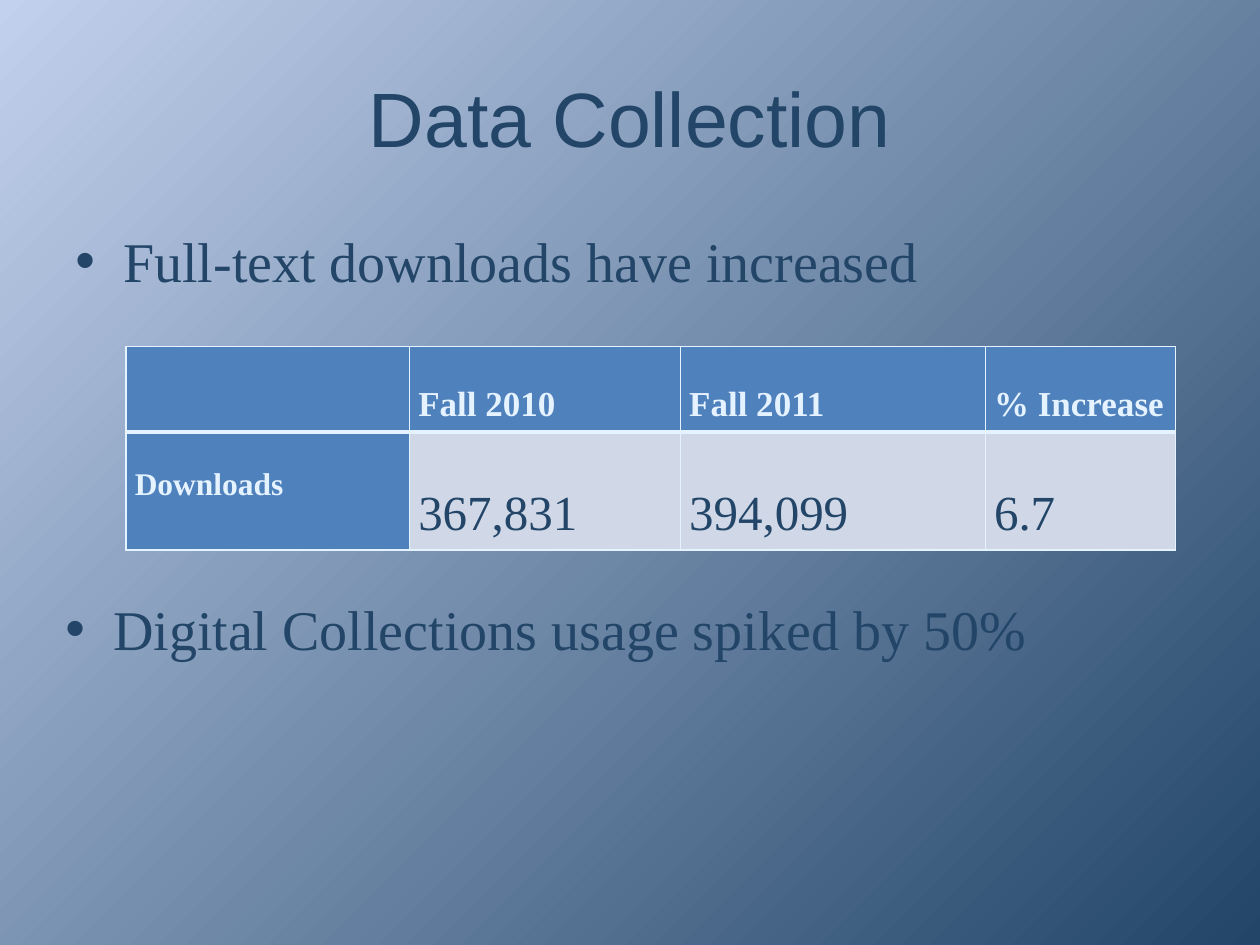
"""Build the Data Collection slide with its table of downloads."""
from lxml.etree import SubElement
from pptx import Presentation
from pptx.dml.color import RGBColor
from pptx.enum.text import MSO_ANCHOR, PP_ALIGN
from pptx.oxml.ns import qn
from pptx.util import Inches, Pt

NAVY = RGBColor(0x22, 0x45, 0x68)
SKY = RGBColor(0xC2, 0xD1, 0xED)
PALE = RGBColor(0xE5, 0xF2, 0xFF)
BLUE = RGBColor(0x4F, 0x81, 0xBD)
GRAY = RGBColor(0xD0, 0xD8, 0xE8)
SERIF = "Times New Roman"


def style(par, size, color, face=SERIF, bold=False):
    for run in par.runs:
        run.font.size = Pt(size)
        run.font.name = face
        run.font.bold = bold
        run.font.color.rgb = color


def add_text(text, left, top, width, height):
    box = slide.shapes.add_textbox(*map(Inches, (left, top, width, height)))
    frame = box.text_frame
    frame.word_wrap = True
    frame.text = text
    return frame


deck = Presentation()
deck.slide_width, deck.slide_height = Inches(10), Inches(7.5)
slide = deck.slides.add_slide(deck.slide_layouts[6])

back = slide.background.fill
back.gradient()
back.gradient_angle = 315
for stop, color in zip(back.gradient_stops, (SKY, NAVY)):
    stop.color.rgb = color

title = add_text("Data Collection", 0.5, 0.3, 9, 1.25)
title.vertical_anchor = MSO_ANCHOR.MIDDLE
title.paragraphs[0].alignment = PP_ALIGN.CENTER
style(title.paragraphs[0], 44, NAVY, "Arial")

points = [
    ("Full-text downloads have increased", 0.5, 1.75, 1.5),
    ("Digital Collections usage spiked by 50%", 0.42, 4.67, 1.08),
]
for text, left, top, height in points:
    par = add_text(text, left, top, 9, height).paragraphs[0]
    par.space_before = Pt(6.4)
    style(par, 32, NAVY)
    props = par._p.get_or_add_pPr()
    props.set("marL", str(Inches(0.38)))
    props.set("indent", str(Inches(-0.38)))
    SubElement(props, qn("a:buFont"), typeface="Arial")
    SubElement(props, qn("a:buChar"), char="•")

rows = [
    ("", "Fall 2010", "Fall 2011", "% Increase"),
    ("Downloads", "367,831", "394,099", "6.7"),
]
widths = (2.25, 2.15, 2.42, 1.51)
table = slide.shapes.add_table(
    2, 4, Inches(1), Inches(2.75), Inches(sum(widths)), Inches(1.36)
).table
for col, width in zip(table.columns, widths):
    col.width = Inches(width)
for r, row in enumerate(rows):
    table.rows[r].height = Inches(0.68)
    for c, text in enumerate(row):
        cell = table.cell(r, c)
        head = r == 0 or c == 0
        cell.margin_left = cell.margin_right = Inches(0.07)
        cell.margin_top = cell.margin_bottom = 0
        par = cell.text_frame.paragraphs[0]
        par.text = text
        par.line_spacing = 2.0
        size = 20 if r == 0 else 18 if c == 0 else 28
        style(par, size, PALE if head else NAVY, bold=head)
        props = cell._tc.get_or_add_tcPr()
        for side in "LRTB":
            thick = (r, side) in ((0, "B"), (1, "T"))
            line = SubElement(props, qn("a:ln" + side), w=str(Pt(3 if thick else 1)))
            paint = SubElement(line, qn("a:solidFill"))
            SubElement(paint, qn("a:srgbClr"), val=str(PALE))
        cell.fill.solid()
        cell.fill.fore_color.rgb = BLUE if head else GRAY

deck.save("out.pptx")
